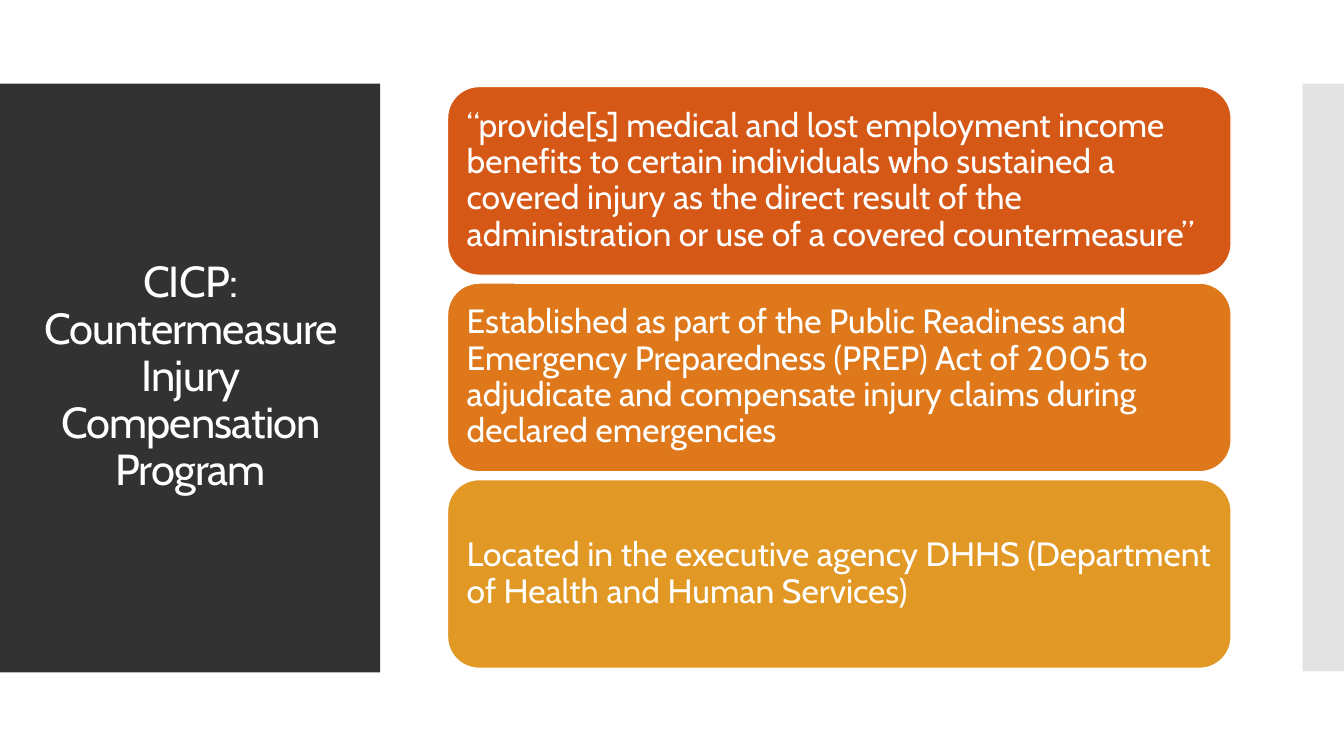
from lxml import etree
from pptx import Presentation
from pptx.dml.color import RGBColor
from pptx.enum.shapes import MSO_SHAPE
from pptx.enum.text import MSO_ANCHOR, MSO_AUTO_SIZE, PP_ALIGN
from pptx.oxml.ns import qn
from pptx.util import Pt

RECTANGLE = MSO_SHAPE.RECTANGLE
ROUNDED = MSO_SHAPE.ROUNDED_RECTANGLE
MIDDLE = MSO_ANCHOR.MIDDLE
NO_AUTOFIT = MSO_AUTO_SIZE.NONE
LEFT, CENTER = PP_ALIGN.LEFT, PP_ALIGN.CENTER

WHITE = RGBColor(0xFF, 0xFF, 0xFF)
CHARCOAL = RGBColor(0x32, 0x32, 0x32)
GRAY = RGBColor(0xC8, 0xC8, 0xC8)
RED_ORANGE = RGBColor(0xD5, 0x58, 0x16)
ORANGE = RGBColor(0xDE, 0x78, 0x1B)
AMBER = RGBColor(0xE1, 0x98, 0x25)

FONT = "Cabin"
TITLE_LINES = ["CICP:", "Countermeasure Injury Compensation Program"]
CARDS = [
    ("“provide[s] medical and lost employment income benefits to certain "
     "individuals who sustained a covered injury as the direct result of the "
     "administration or use of a covered countermeasure”", RED_ORANGE),
    ("Established as part of the Public Readiness and Emergency Preparedness "
     "(PREP) Act of 2005 to adjudicate and compensate injury claims during "
     "declared emergencies", ORANGE),
    ("Located in the executive agency DHHS (Department of Health and Human "
     "Services)", AMBER),
]

EMU_PER_PX = 9144
SLIDE_SIZE = (1333, 750)
TITLE_PANEL = (0, 83, 377, 584)
EDGE_BAR = (1292, 83, 41, 583)
TITLE_BOX = (28, 123, 322, 503)
CARD_LEFT, CARD_TOP, CARD_WIDTH, CARD_HEIGHT = 444, 86, 777, 187
CARD_PITCH = 195
CARD_INSET = 10


def emu(px):
    return px * EMU_PER_PX


def add_block(slide, kind, box, color):
    shape = slide.shapes.add_shape(kind, *map(emu, box))
    shape.shadow.inherit = False
    shape.fill.solid()
    shape.fill.fore_color.rgb = color
    shape.line.fill.background()
    return shape


def add_text(paragraph, text, size):
    run = paragraph.add_run()
    run.text = text
    run.font.name = FONT
    run.font.size = Pt(size)
    run.font.color.rgb = WHITE
    return run


def set_up_text(shape, alignment):
    frame = shape.text_frame
    frame.word_wrap = True
    frame.auto_size = NO_AUTOFIT
    frame.vertical_anchor = MIDDLE
    paragraph = frame.paragraphs[0]
    paragraph.alignment = alignment
    paragraph.line_spacing = 0.9
    return paragraph


def add_title(slide):
    title = slide.shapes.title
    title.left, title.top, title.width, title.height = map(emu, TITLE_BOX)
    paragraph = set_up_text(title, CENTER)
    for index, line in enumerate(TITLE_LINES):
        if index:
            paragraph.add_line_break()
        run = add_text(paragraph, line, 31)
        run.font._element.set("spc", "-60")
    slide.shapes._spTree.append(title._element)


def add_card(slide, index, text, color):
    box = (CARD_LEFT, CARD_TOP + index * CARD_PITCH, CARD_WIDTH, CARD_HEIGHT)
    card = add_block(slide, ROUNDED, box, color)
    card.line.color.rgb = WHITE
    card.line.width = Pt(0.85)
    paragraph = set_up_text(card, LEFT)
    frame = card.text_frame
    frame.margin_left = frame.margin_right = emu(CARD_INSET)
    frame.margin_top = frame.margin_bottom = emu(CARD_INSET)
    add_text(paragraph, text, 24)


def main():
    presentation = Presentation()
    presentation.slide_width, presentation.slide_height = map(emu, SLIDE_SIZE)
    slide = presentation.slides.add_slide(presentation.slide_layouts[5])

    edge_bar = add_block(slide, RECTANGLE, EDGE_BAR, GRAY)
    bar_color = edge_bar._element.spPr.find(qn("a:solidFill"))[0]
    etree.SubElement(bar_color, qn("a:alpha")).set("val", "50000")

    add_block(slide, RECTANGLE, TITLE_PANEL, CHARCOAL)
    add_title(slide)
    for index, (text, color) in enumerate(CARDS):
        add_card(slide, index, text, color)

    presentation.save("out.pptx")


if __name__ == "__main__":
    main()
